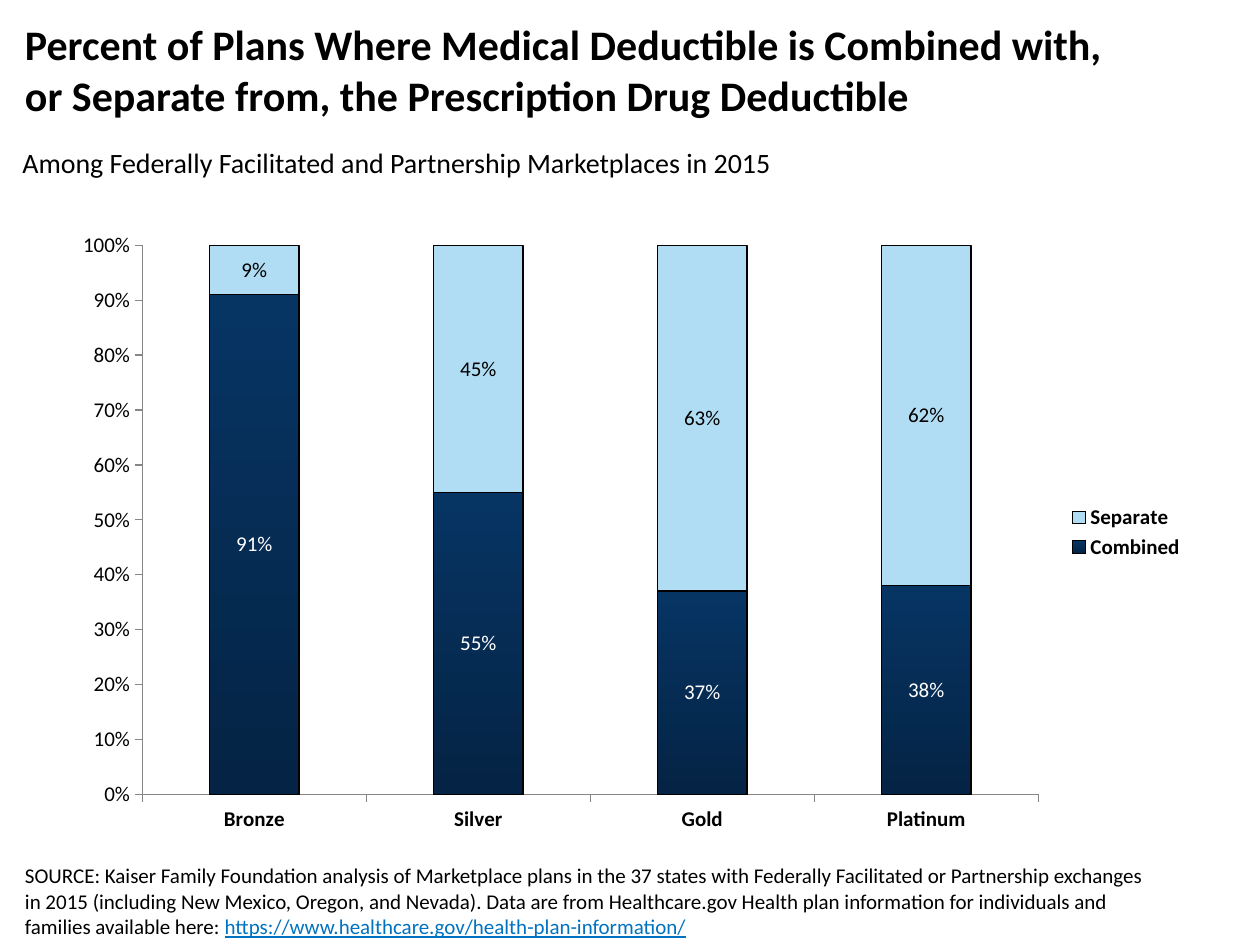
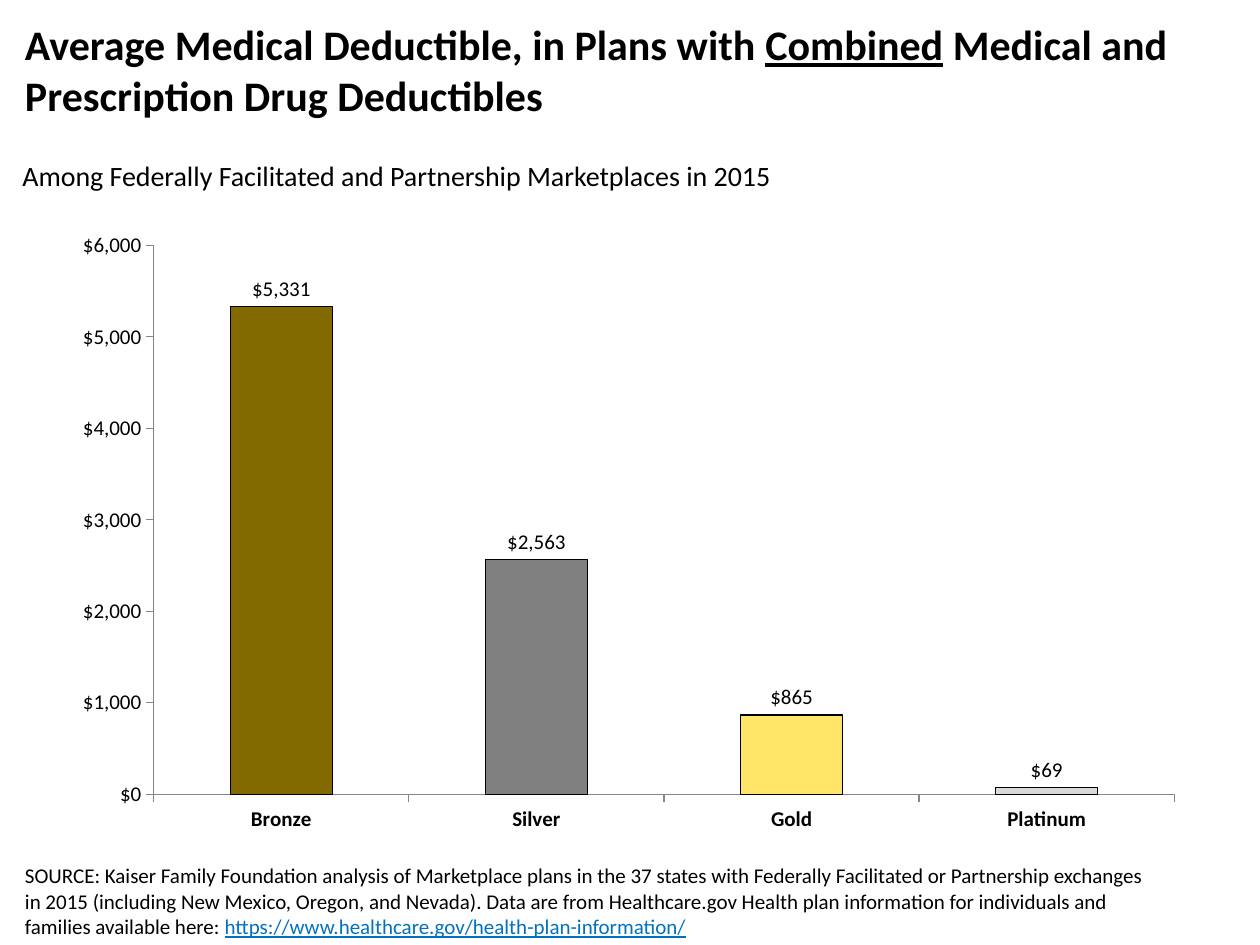
from lxml import etree
from pptx import Presentation
from pptx.chart.data import CategoryChartData
from pptx.dml.color import RGBColor
from pptx.enum.chart import XL_CHART_TYPE, XL_LABEL_POSITION, XL_LEGEND_POSITION, XL_TICK_MARK
from pptx.enum.text import MSO_ANCHOR
from pptx.oxml import parse_xml
from pptx.oxml.ns import nsdecls
from pptx.util import Pt

PX = 9144  # EMU per px, 100 px to the inch
FONT = "Calibri"
COLORS = {
    "text": "000000", "link": "0072C0", "axis": "868686", "label_on_dark": "FFFFFF",
    "combined_top": "063463", "combined_bottom": "052445", "separate": "B0DDF4",
    "Bronze": "826A00", "Silver": "808080", "Gold": "FFE468", "Platinum": "D9D9D9",
}
METALS = ["Bronze", "Silver", "Gold", "Platinum"]
SUBTITLE = "Among Federally Facilitated and Partnership Marketplaces in 2015"
SOURCE = (
    "SOURCE: Kaiser Family Foundation analysis of Marketplace plans in the 37 states with "
    "Federally Facilitated or Partnership exchanges in 2015 (including New Mexico, Oregon, and "
    "Nevada). Data are from Healthcare.gov Health plan information for individuals and families "
    "available here: "
)
SOURCE_URL = "https://www.healthcare.gov/health-plan-information/"

pages = [
    {
        "title": [("Percent of Plans Where Medical Deductible is Combined with, \v"
                   "or Separate from, the Prescription Drug Deductible", False)],
        "subtitle_top": 111,
        "type": XL_CHART_TYPE.COLUMN_STACKED_100,
        "series": {"Combined": [0.91, 0.55, 0.37, 0.38], "Separate": [0.09, 0.45, 0.63, 0.62]},
        "format": "0%", "axis_max": 1, "axis_step": 0.1,
        "plot_left": 0.07, "plot_width": 0.79,
    },
    {
        "title": [("Average Medical Deductible, in Plans with ", False), ("Combined", True),
                  (" Medical and Prescription Drug Deductibles", False)],
        "subtitle_top": 121,
        "type": XL_CHART_TYPE.COLUMN_CLUSTERED,
        "series": {"Series 1": [5331, 2563, 865, 69]},
        "format": '"$"#,##0', "axis_max": 6000, "axis_step": 1000,
        "plot_left": 0.08, "plot_width": 0.9,
    },
]


def rgb(name):
    return RGBColor.from_string(COLORS[name])


def add_text(slide, box, runs, size, bold=False, wrap=True):
    """Add one paragraph; each run is (text, underlined, colour name)."""
    frame = slide.shapes.add_textbox(*(n * PX for n in box)).text_frame
    frame.word_wrap = wrap
    frame.vertical_anchor = MSO_ANCHOR.TOP
    paragraph = frame.paragraphs[0]
    for text, underlined, color in runs:
        for i, line in enumerate(text.split("\v")):
            if i:
                paragraph.add_line_break()
            run = paragraph.add_run()
            run.text = line
            run.font.color.rgb = rgb(color)
            if underlined:
                run.font.underline = True
    paragraph.font.name = FONT
    paragraph.font.size = Pt(size)
    paragraph.font.bold = bold


prs = Presentation()
prs.slide_width, prs.slide_height = 1000 * PX, 750 * PX

for page in pages:
    slide = prs.slides.add_slide(prs.slide_layouts[6])
    add_text(slide, (10, 10, 980, 100), [(*run, "text") for run in page["title"]], 24, bold=True)

    data = CategoryChartData(number_format=page["format"])
    data.categories = METALS
    for name, values in page["series"].items():
        data.add_series(name, values)
    chart = slide.shapes.add_chart(
        page["type"], 50 * PX, 175 * PX, 900 * PX, 495 * PX, data).chart
    chart.has_title = False
    chart.font.name = FONT
    chart.font.size = Pt(12)
    chart.font.color.rgb = rgb("text")

    for axis in (chart.category_axis, chart.value_axis):
        axis.has_major_gridlines = False
        axis.major_tick_mark = XL_TICK_MARK.OUTSIDE
        axis.minor_tick_mark = XL_TICK_MARK.NONE
        axis.format.line.color.rgb = rgb("axis")
        axis.format.line.width = Pt(0.75)
        axis.tick_labels.font.size = Pt(12)
    chart.category_axis.tick_labels.font.bold = True
    values_axis = chart.value_axis
    values_axis.minimum_scale, values_axis.maximum_scale = 0, page["axis_max"]
    values_axis.major_unit = page["axis_step"]
    values_axis.tick_labels.number_format = page["format"]
    values_axis.tick_labels.number_format_is_linked = False

    plot = chart.plots[0]
    plot.gap_width = 150
    plot.vary_by_categories = False
    stacked = len(page["series"]) > 1
    chart.has_legend = stacked
    if stacked:
        plot.overlap = 100
        chart.legend.position = XL_LEGEND_POSITION.RIGHT
        chart.legend.include_in_layout = False
        chart.legend.font.size = Pt(12)
        chart.legend.font.bold = True

    for series in plot.series:
        series.format.line.color.rgb = rgb("text")
        series.format.line.width = Pt(0.75)
        fill = series.format.fill
        labels = series.data_labels
        labels.show_value = True
        labels.number_format = page["format"]
        labels.number_format_is_linked = False
        labels.font.size = Pt(12)
        labels.font.color.rgb = rgb("label_on_dark" if series.name == "Combined" else "text")
        labels.position = XL_LABEL_POSITION.CENTER if stacked else XL_LABEL_POSITION.OUTSIDE_END
        if series.name == "Combined":
            fill.gradient()
            fill.gradient_angle = 270
            for stop, color in zip(fill.gradient_stops, ("combined_top", "combined_bottom")):
                stop.color.rgb = rgb(color)
        elif series.name == "Separate":
            fill.solid()
            fill.fore_color.rgb = rgb("separate")
        else:
            for i, metal in enumerate(METALS):
                column = series.points[i].format
                column.fill.solid()
                column.fill.fore_color.rgb = rgb(metal)
                column.line.color.rgb = rgb("text")
                column.line.width = Pt(0.75)

    # Fix the inner plot area as fractions of the chart
    plot_area = chart.element.find(".//{*}plotArea")
    for automatic in plot_area.findall("{*}layout"):
        plot_area.remove(automatic)
    layout = parse_xml(f"<c:layout {nsdecls('c')}><c:manualLayout/></c:layout>")
    settings = {"layoutTarget": "inner", "xMode": "edge", "yMode": "edge",
                "x": page["plot_left"], "y": 0.04, "w": page["plot_width"], "h": 0.88}
    for tag, value in settings.items():
        etree.SubElement(layout[0], f"{{{layout.nsmap['c']}}}{tag}", val=str(value))
    plot_area.insert(0, layout)

    add_text(slide, (8, page["subtitle_top"], 626, 37), [(SUBTITLE, False, "text")], 16, wrap=False)
    add_text(slide, (10, 680, 910, 60),
             [(SOURCE, False, "text"), (SOURCE_URL, True, "link")], 12)

prs.save("out.pptx")
